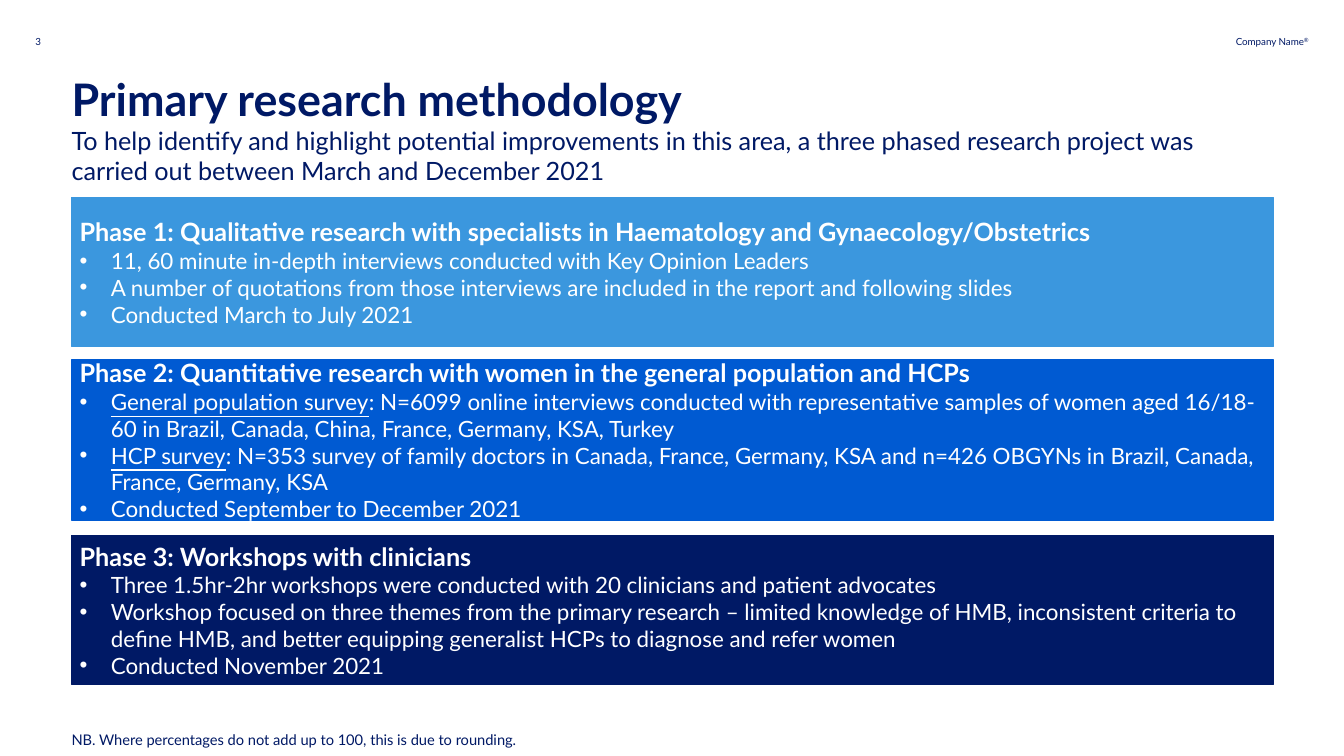
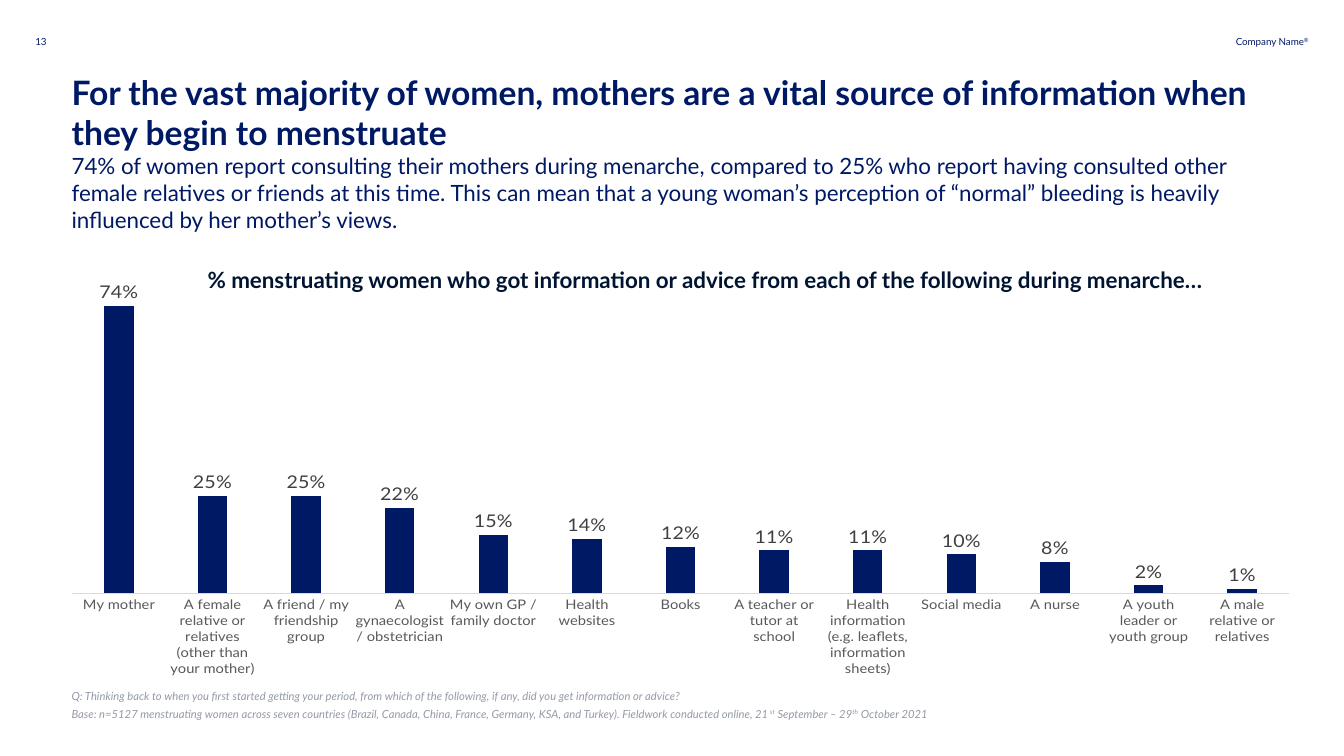
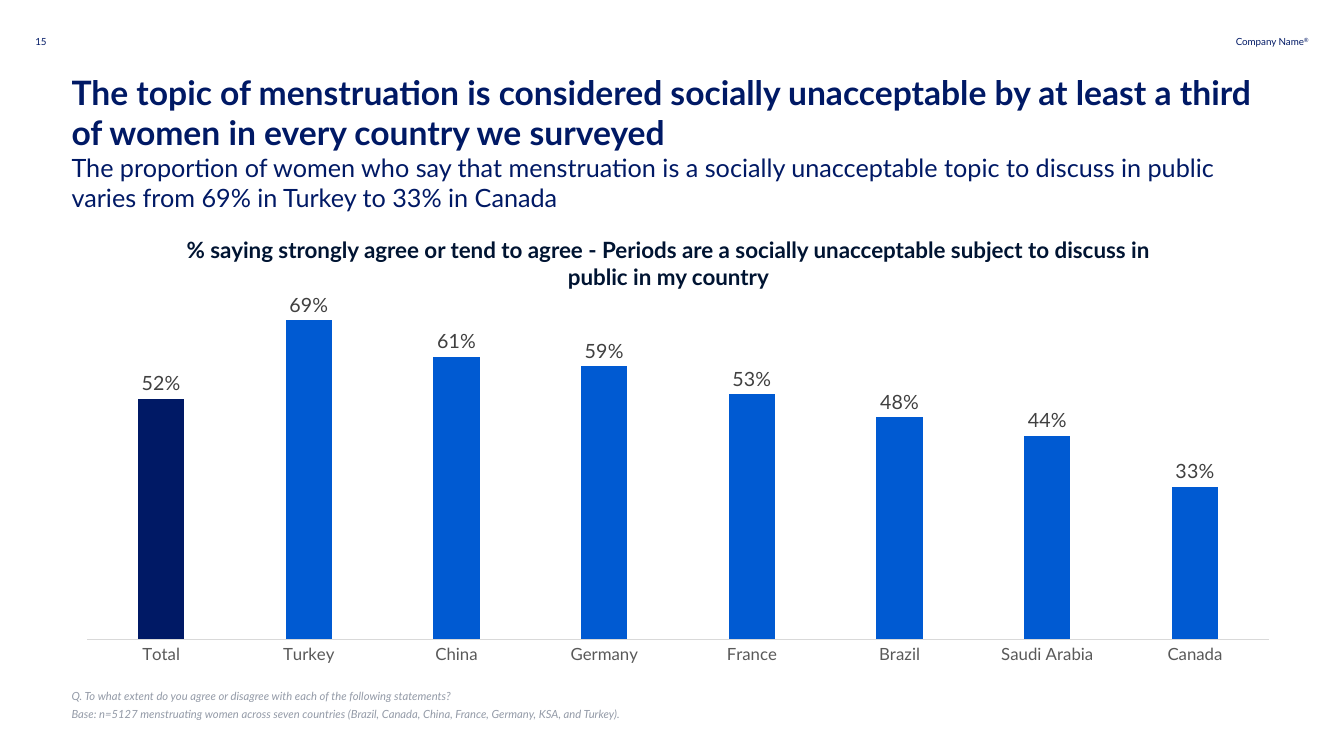
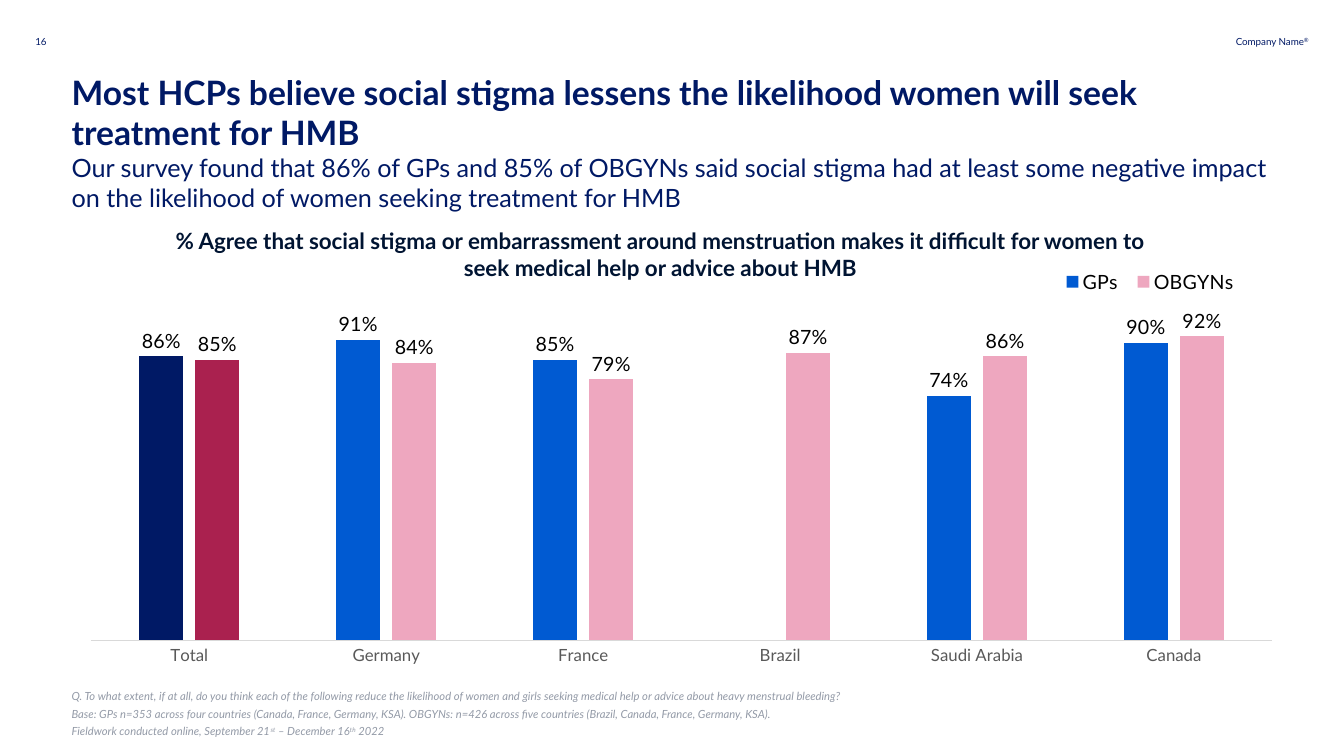
from lxml import etree
from pptx import Presentation
from pptx.chart.data import CategoryChartData
from pptx.dml.color import RGBColor
from pptx.enum.chart import XL_CHART_TYPE, XL_LABEL_POSITION, XL_LEGEND_POSITION, XL_TICK_MARK
from pptx.enum.shapes import MSO_SHAPE
from pptx.enum.text import MSO_ANCHOR, PP_ALIGN
from pptx.oxml.ns import qn
from pptx.util import Inches, Pt

COLUMNS = XL_CHART_TYPE.COLUMN_CLUSTERED
OUTSIDE_END = XL_LABEL_POSITION.OUTSIDE_END
LEGEND_BOTTOM = XL_LEGEND_POSITION.BOTTOM
NO_TICKS = XL_TICK_MARK.NONE
RECTANGLE = MSO_SHAPE.RECTANGLE
TOP, MIDDLE = MSO_ANCHOR.TOP, MSO_ANCHOR.MIDDLE
LEFT, CENTER, RIGHT = PP_ALIGN.LEFT, PP_ALIGN.CENTER, PP_ALIGN.RIGHT

NAVY = RGBColor(0x00, 0x19, 0x65)
BLUE = RGBColor(0x00, 0x5A, 0xD2)
SKY = RGBColor(0x3B, 0x97, 0xDE)
PINK = RGBColor(0xEE, 0xA7, 0xBF)
CRIMSON = RGBColor(0xAA, 0x21, 0x4F)
INK = RGBColor(0x00, 0x14, 0x32)
NOTE_GREY = RGBColor(0x93, 0x9A, 0xA7)
LABEL_GREY = RGBColor(0x40, 0x40, 0x40)
AXIS_GREY = RGBColor(0x59, 0x59, 0x59)
LINE_GREY = RGBColor(0xD9, 0xD9, 0xD9)
BLACK = RGBColor(0x00, 0x00, 0x00)
WHITE = RGBColor(0xFF, 0xFF, 0xFF)
FONT = "Lato"
MARGIN = 0.71
SUPERSCRIPT = ("baseline", "30000")
UNDERLINE = ("u", "sng")


def write_text(shape, lines, color, align=LEFT, anchor=TOP, inset=(0, 0), gap=0,
               italic=False, bullets=False, marked=SUPERSCRIPT):
    frame = shape.text_frame
    frame.word_wrap = True
    frame.vertical_anchor = anchor
    frame.margin_left = frame.margin_right = Inches(inset[0])
    frame.margin_top = frame.margin_bottom = Inches(inset[1])
    for index, (text, size, bold) in enumerate(lines):
        paragraph = frame.add_paragraph() if index else frame.paragraphs[0]
        paragraph.alignment = align
        if index and gap:
            paragraph.space_before = Pt(gap)
        if index and bullets:
            properties = paragraph._p.get_or_add_pPr()
            properties.set("marL", str(Inches(0.31)))
            properties.set("indent", str(-Inches(0.31)))
            etree.SubElement(properties, qn("a:buFont")).set("typeface", "Arial")
            etree.SubElement(properties, qn("a:buChar")).set("char", "•")
        for position, piece in enumerate(text.split("^")):
            if not piece:
                continue
            run = paragraph.add_run()
            run.text = piece
            run.font.name = FONT
            run.font.size = Pt(size)
            run.font.bold = bold
            run.font.italic = italic
            run.font.color.rgb = color
            if position % 2:
                run._r.get_or_add_rPr().set(*marked)


def place_inside_chart(part, index, bounds, inner=False):
    for old_layout in part.findall(qn("c:layout")):
        part.remove(old_layout)
    layout = etree.Element(qn("c:layout"))
    manual = etree.SubElement(layout, qn("c:manualLayout"))
    settings = [("layoutTarget", "inner")] if inner else []
    settings += [("xMode", "edge"), ("yMode", "edge")]
    settings += zip("xywh", bounds)
    for tag, value in settings:
        etree.SubElement(manual, qn("c:" + tag)).set("val", str(value))
    part.insert(index, layout)


pages = [
    dict(
        number="3", title="Primary research methodology", title_size=32, width=11.92,
        summary="To help identify and highlight potential improvements in this area, a three phased research project was carried out between March and December 2021",
        summary_size=18,
    ),
    dict(
        number="13", title_size=24, width=12.08,
        title="For the vast majority of women, mothers are a vital source of information when they begin to menstruate",
        summary="74% of women report consulting their mothers during menarche, compared to 25% who report having consulted other female relatives or friends at this time. This can mean that a young woman’s perception of “normal” bleeding is heavily influenced by her mother’s views.",
        summary_size=16,
        notes=[
            "Q: Thinking back to when you first started getting your period, from which of the following, if any, did you get information or advice?",
            "Base: n=5127 menstruating women across seven countries (Brazil, Canada, China, France, Germany, KSA, and Turkey). Fieldwork conducted online, 21^st^ September – 29^th^ October 2021",
        ],
        heading="% menstruating women who got information or advice from each of the following during menarche…",
        heading_box=(1.76, 2.64, 10.47, 0.27),
        chart_box=(MARGIN, 2.67, 12.08, 4.04), plot=(0, 0.038, 1, 0.854),
        axis_size=10.5, maximum=0.8, label_color=LABEL_GREY,
        categories=[
            "My mother", "A female relative or relatives (other than your mother)",
            "A friend / my friendship group", "A gynaecologist / obstetrician",
            "My own GP / family doctor", "Health websites", "Books",
            "A teacher or tutor at school",
            "Health information (e.g. leaflets, information sheets)", "Social media",
            "A nurse", "A youth leader or youth group", "A male relative or relatives",
        ],
        series=[("Series 1", NAVY, NAVY, [0.74, 0.25, 0.25, 0.22, 0.15, 0.14, 0.12,
                                         0.11, 0.11, 0.1, 0.08, 0.02, 0.01])],
    ),
    dict(
        number="15", title_size=24, width=11.92,
        title="The topic of menstruation is considered socially unacceptable by at least a third of women in every country we surveyed",
        summary="The proportion of women who say that menstruation is a socially unacceptable topic to discuss in public varies from 69% in Turkey to 33% in Canada",
        summary_size=18,
        notes=[
            "Q. To what extent do you agree or disagree with each of the following statements?",
            "Base: n=5127 menstruating women across seven countries (Brazil, Canada, China, France, Germany, KSA, and Turkey).",
        ],
        heading="% saying strongly agree or tend to agree - Periods are a socially unacceptable subject to discuss in public in my country",
        heading_box=(1.76, 2.34, 9.74, 0.54),
        chart_box=(MARGIN, 2.13, 12.02, 4.59), plot=(0.013, 0.118, 0.975, 0.8),
        axis_size=12, maximum=0.8, label_color=LABEL_GREY,
        categories=["Total", "Turkey", "China", "Germany", "France", "Brazil", "Saudi Arabia", "Canada"],
        series=[("Series 1", BLUE, NAVY, [0.52, 0.69, 0.61, 0.59, 0.53, 0.48, 0.44, 0.33])],
    ),
    dict(
        number="16", title_size=24, width=11.92,
        title="Most HCPs believe social stigma lessens the likelihood women will seek treatment for HMB",
        summary="Our survey found that 86% of GPs and 85% of OBGYNs said social stigma had at least some negative impact on the likelihood of women seeking treatment for HMB",
        summary_size=18,
        notes=[
            "Q. To what extent, if at all, do you think each of the following reduce the likelihood of women and girls seeking medical help or advice about heavy menstrual bleeding?",
            "Base: GPs n=353 across four countries (Canada, France, Germany, KSA). OBGYNs: n=426 across five countries (Brazil, Canada, France, Germany, KSA).",
            "Fieldwork conducted online, September 21^st^ – December 16^th^ 2022",
        ],
        heading="% Agree that social stigma or embarrassment around menstruation makes it difficult for women to seek medical help or advice about HMB",
        heading_box=(1.68, 2.25, 9.74, 0.54),
        chart_box=(MARGIN, 2.13, 12.02, 4.59), plot=(0.016, 0.206, 0.975, 0.714),
        axis_size=12, maximum=1, label_color=BLACK,
        categories=["Total", "Germany", "France", "Brazil", "Saudi Arabia", "Canada"],
        series=[
            ("GPs", BLUE, NAVY, [0.86, 0.91, 0.85, None, 0.74, 0.9]),
            ("OBGYNs", PINK, CRIMSON, [0.85, 0.84, 0.79, 0.87, 0.86, 0.92]),
        ],
    ),
]

phases = [
    (1.96, 1.48, SKY, "Phase 1: Qualitative research with specialists in Haematology and Gynaecology/Obstetrics", [
        "11, 60 minute in-depth interviews conducted with Key Opinion Leaders",
        "A number of quotations from those interviews are included in the report and following slides",
        "Conducted March to July 2021",
    ]),
    (3.57, 1.59, BLUE, "Phase 2: Quantitative research with women in the general population and HCPs", [
        "^General population survey^: N=6099 online interviews conducted with representative samples of women aged 16/18-60 in Brazil, Canada, China, France, Germany, KSA, Turkey",
        "^HCP survey^: N=353 survey of family doctors in Canada, France, Germany, KSA and n=426 OBGYNs in Brazil, Canada, France, Germany, KSA",
        "Conducted September to December 2021",
    ]),
    (5.31, 1.48, NAVY, "Phase 3: Workshops with clinicians", [
        "Three 1.5hr-2hr workshops were conducted with 20 clinicians and patient advocates",
        "Workshop focused on three themes from the primary research – limited knowledge of HMB, inconsistent criteria to define HMB, and better equipping generalist HCPs to diagnose and refer women",
        "Conducted November 2021",
    ]),
]

deck = Presentation()
deck.slide_width = Inches(13.33)
deck.slide_height = Inches(7.5)

for page in pages:
    slide = deck.slides.add_slide(deck.slide_layouts[6])

    owner = slide.shapes.add_textbox(Inches(12.02), Inches(0.35), Inches(0.96), Inches(0.12))
    write_text(owner, [("Company Name^®^", 7, False)], NAVY, align=RIGHT)
    page_number = slide.shapes.add_textbox(Inches(0.35), Inches(0.35), Inches(0.35), Inches(0.14))
    write_text(page_number, [(page["number"], 7, False)], NAVY)
    title = slide.shapes.add_textbox(Inches(MARGIN), Inches(0.71), Inches(page["width"]), Inches(1.42))
    write_text(title, [(page["title"], page["title_size"], True),
                       (page["summary"], page["summary_size"], False)], NAVY)

    if "series" not in page:
        for top, height, color, phase_name, details in phases:
            panel = slide.shapes.add_shape(
                RECTANGLE, Inches(MARGIN), Inches(top), Inches(page["width"]), Inches(height))
            panel.shadow.inherit = False
            panel.fill.solid()
            panel.fill.fore_color.rgb = color
            panel.line.color.rgb = color
            panel.line.width = Pt(1)
            write_text(panel, [(phase_name, 18, True)] + [(detail, 16, False) for detail in details],
                       WHITE, anchor=MIDDLE, inset=(0.08, 0.04), bullets=True, marked=UNDERLINE)
        rounding_note = slide.shapes.add_textbox(Inches(MARGIN), Inches(7.22), Inches(4.65), Inches(0.2))
        write_text(rounding_note, [("NB. Where percentages do not add up to 100, this is due to rounding.", 10.5, False)], NAVY)
        rounding_note.text_frame.paragraphs[0].line_spacing = 1.2
        continue

    survey = CategoryChartData(number_format="0%")
    survey.categories = page["categories"]
    for series_name, color, total_color, values in page["series"]:
        survey.add_series(series_name, values)
    chart = slide.shapes.add_chart(COLUMNS, *[Inches(length) for length in page["chart_box"]], survey).chart
    chart.has_title = False
    chart.has_legend = len(page["series"]) > 1
    chart.font.name = FONT
    chart.font.size = Pt(10)
    chart.font.color.rgb = BLACK

    answers = chart.category_axis
    answers.major_tick_mark = NO_TICKS
    answers.minor_tick_mark = NO_TICKS
    answers.format.line.color.rgb = LINE_GREY
    answers.format.line.width = Pt(0.75)
    answers.tick_labels.font.name = FONT
    answers.tick_labels.font.size = Pt(page["axis_size"])
    answers.tick_labels.font.color.rgb = AXIS_GREY
    shares = chart.value_axis
    shares.minimum_scale = 0
    shares.maximum_scale = page["maximum"]
    shares.has_major_gridlines = False
    shares.visible = False

    columns = chart.plots[0]
    columns.gap_width = 219
    columns.overlap = -27
    columns.vary_by_categories = False
    for bars, (series_name, color, total_color, values) in zip(columns.series, page["series"]):
        bars.invert_if_negative = False
        bars.format.fill.solid()
        bars.format.fill.fore_color.rgb = color
        if total_color != color:
            total = bars.points[0].format.fill
            total.solid()
            total.fore_color.rgb = total_color
        labels = bars.data_labels
        labels.show_value = True
        labels.position = OUTSIDE_END
        labels.number_format = "0%"
        labels.number_format_is_linked = False
        labels.font.name = FONT
        labels.font.size = Pt(14)
        labels.font.color.rgb = page["label_color"]

    place_inside_chart(chart._chartSpace.find(".//" + qn("c:plotArea")), 0, page["plot"], inner=True)
    if chart.has_legend:
        chart.legend.position = LEGEND_BOTTOM
        chart.legend.include_in_layout = False
        chart.legend.font.name = FONT
        chart.legend.font.size = Pt(14)
        chart.legend.font.color.rgb = BLACK
        place_inside_chart(chart._chartSpace.find(".//" + qn("c:legend")), 1, (0.81, 0.11, 0.16, 0.07))

    heading = slide.shapes.add_textbox(*[Inches(length) for length in page["heading_box"]])
    write_text(heading, [(page["heading"], 16, True)], INK, align=CENTER)
    source_notes = slide.shapes.add_textbox(Inches(MARGIN), Inches(6.84), Inches(9.46), Inches(0.5))
    write_text(source_notes, [(note, 8, False) for note in page["notes"]], NOTE_GREY, gap=3, italic=True)

deck.save("out.pptx")
